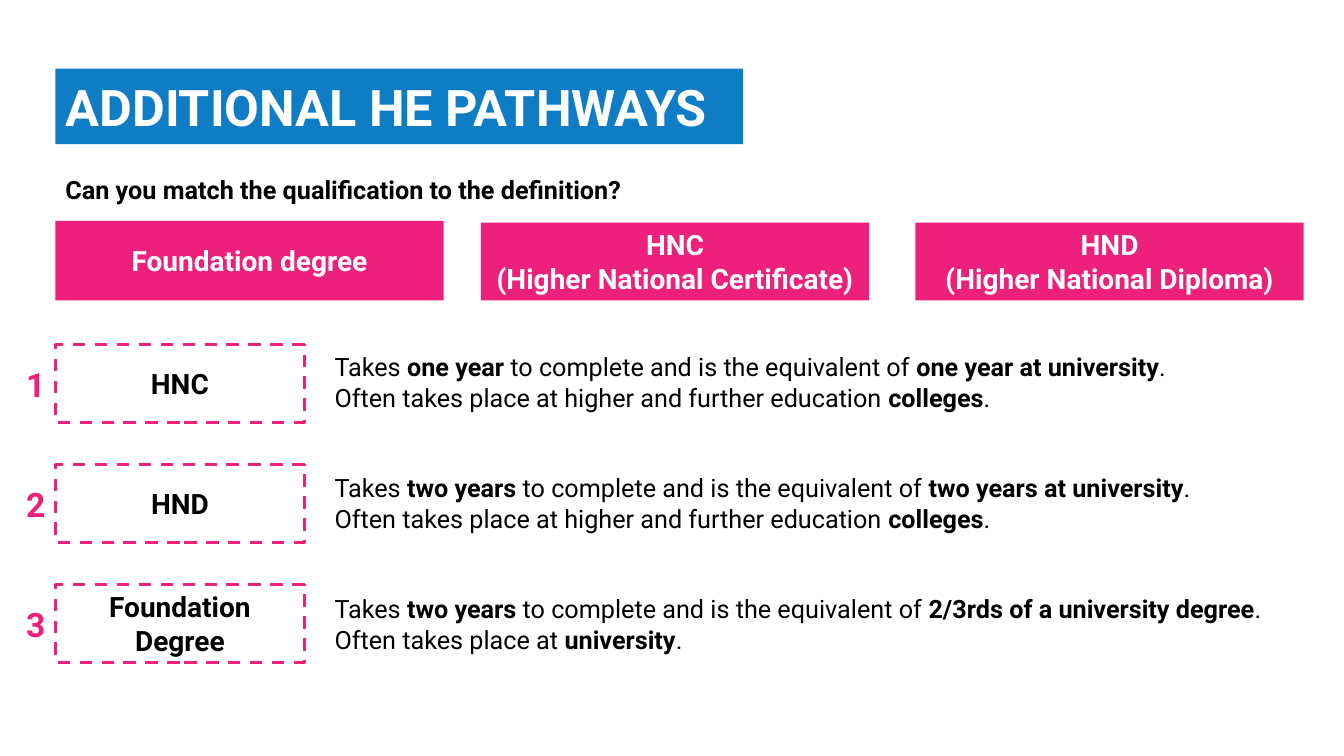
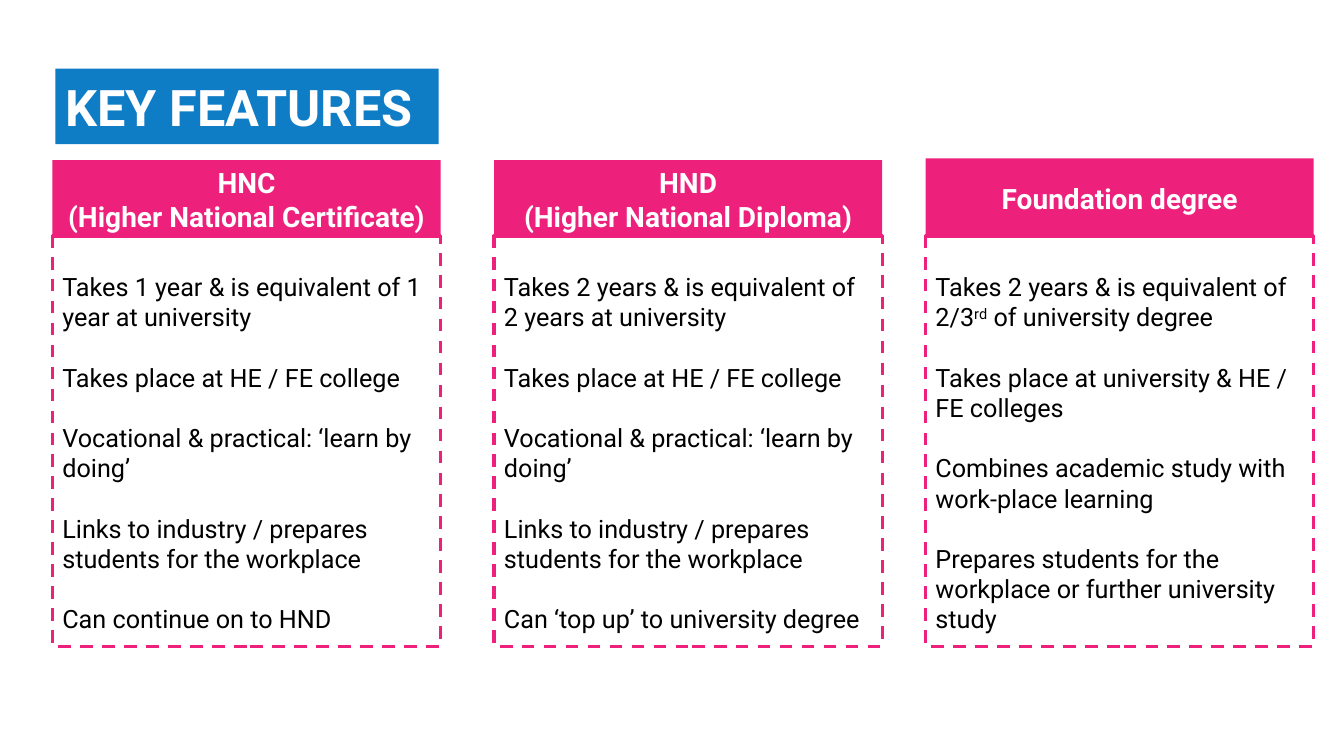
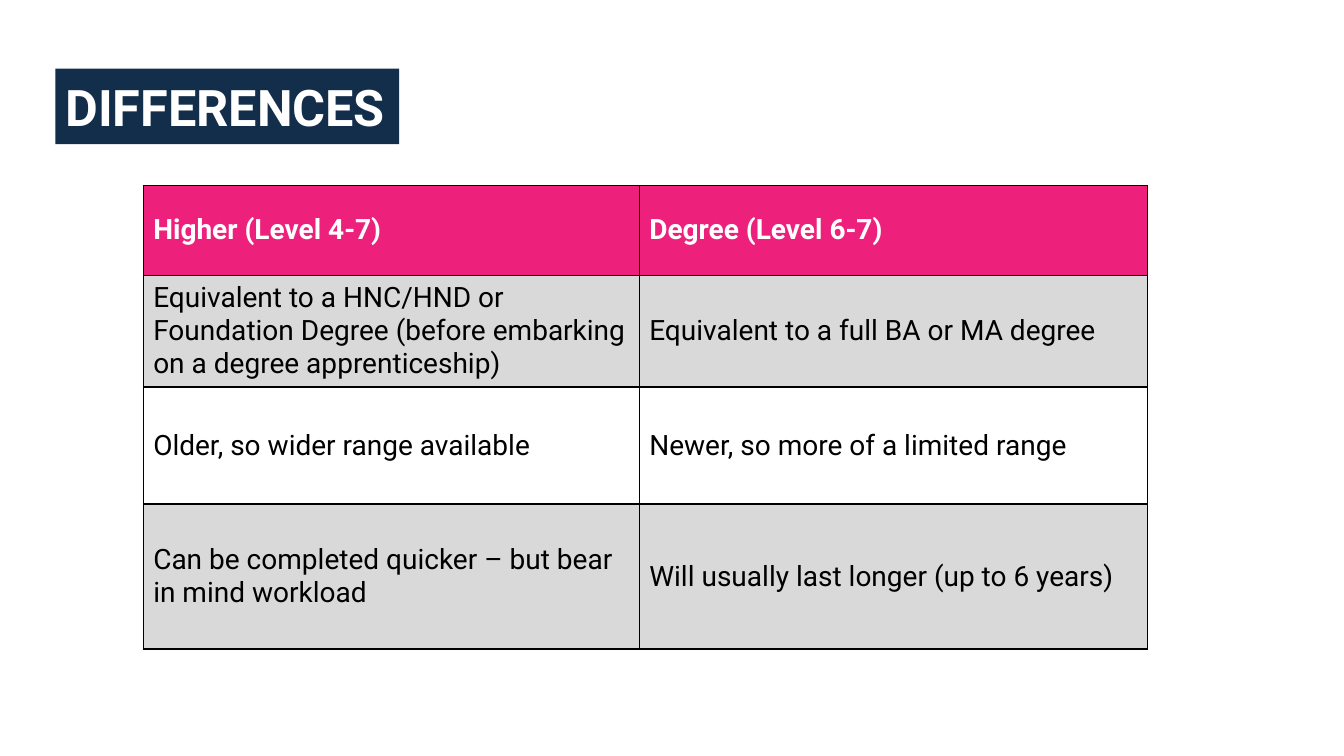
"""Builds three slides on higher education pathways."""
from lxml import etree
from pptx import Presentation
from pptx.dml.color import RGBColor
from pptx.enum.dml import MSO_LINE
from pptx.enum.shapes import MSO_SHAPE
from pptx.enum.text import MSO_ANCHOR, MSO_AUTO_SIZE, PP_ALIGN
from pptx.oxml.ns import qn
from pptx.util import Inches, Pt

RECTANGLE = MSO_SHAPE.RECTANGLE
DASH = MSO_LINE.DASH
TOP, MIDDLE = MSO_ANCHOR.TOP, MSO_ANCHOR.MIDDLE
LEFT, CENTER = PP_ALIGN.LEFT, PP_ALIGN.CENTER
NO_FIT = MSO_AUTO_SIZE.NONE
TITLE_ONLY = 5

COLORS = {
    "blue": "0F7CC6",
    "navy": "132E4B",
    "pink": "ED217C",
    "grey": "D9D9D9",
    "black": "000000",
    "white": "FFFFFF",
}
FONT = "Roboto"
MARGIN = 0.55
CARD_WIDTH = 3.85

FOUNDATION = "Foundation degree"
HNC = "HNC\n(Higher National Certificate)"
HND = "HND\n(Higher National Diploma)"


def color(name):
    return RGBColor.from_string(COLORS[name])


class Deck:
    """Holds the shared style and the current slide."""

    def __init__(self):
        self.presentation = Presentation()
        self.presentation.slide_width = Inches(13.33)
        self.presentation.slide_height = Inches(7.5)
        self.slide = None

    def add_slide(self, title, band_width, band="blue"):
        layout = self.presentation.slide_layouts[TITLE_ONLY]
        self.slide = self.presentation.slides.add_slide(layout)
        shape = self.slide.shapes.title
        shape.left, shape.top = Inches(MARGIN), Inches(0.68)
        shape.width, shape.height = Inches(band_width), Inches(0.75)
        shape.fill.solid()
        shape.fill.fore_color.rgb = color(band)
        self.fill_text(shape.text_frame, title, 36, "white", bold=True, anchor=MIDDLE)

    def fill_text(self, frame, text, size, ink="black", bold=False, align=LEFT,
                  anchor=TOP, gap=0):
        """Adds one paragraph a line; *stars* mark bold and ^carets^ superscript."""
        frame.word_wrap = True
        frame.auto_size = NO_FIT
        frame.vertical_anchor = anchor
        for index, line in enumerate(text.split("\n")):
            paragraph = frame.add_paragraph() if index else frame.paragraphs[0]
            paragraph.alignment = align
            paragraph.space_before = Pt(gap if index else 0)
            for star, part in enumerate(line.split("*")):
                for caret, piece in enumerate(part.split("^")):
                    if piece:
                        run = paragraph.add_run()
                        run.text = piece
                        self.style(run, size, ink, bold or star % 2 == 1)
                        if caret % 2:
                            run._r.get_or_add_rPr().set("baseline", "30000")

    def style(self, run, size, ink, bold):
        run.font.name = FONT
        run.font.size = Pt(size)
        run.font.bold = bold
        run.font.color.rgb = color(ink)

    def text(self, left, top, width, height, text, size, **options):
        box = self.slide.shapes.add_textbox(
            Inches(left), Inches(top), Inches(width), Inches(height))
        self.fill_text(box.text_frame, text, size, **options)

    def rectangle(self, left, top, width, height):
        shape = self.slide.shapes.add_shape(
            RECTANGLE, Inches(left), Inches(top), Inches(width), Inches(height))
        shape.shadow.inherit = False
        return shape

    def header(self, left, bottom, text):
        height = 0.77 if "\n" in text else 0.79
        shape = self.rectangle(left, bottom - height, CARD_WIDTH, height)
        shape.fill.solid()
        shape.fill.fore_color.rgb = color("pink")
        shape.line.fill.background()
        self.fill_text(shape.text_frame, text, 20, "white", bold=True,
                       align=CENTER, anchor=MIDDLE)

    def dashed_box(self, left, top, width, height):
        shape = self.rectangle(left, top, width, height)
        shape.fill.background()
        shape.line.color.rgb = color("pink")
        shape.line.width = Pt(2.25)
        shape.line.dash_style = DASH
        return shape

    def answer(self, left, top, text):
        shape = self.dashed_box(left, top, 2.47, 0.77)
        self.fill_text(shape.text_frame, text, 20, bold=True, align=CENTER, anchor=MIDDLE)

    def panel(self, left, top, text):
        shape = self.dashed_box(left, top, CARD_WIDTH, 4.07)
        shape.text_frame.margin_top = Inches(0.35)
        self.fill_text(shape.text_frame, text, 18, gap=21.6)

    def table(self, left, top, widths, heights, rows):
        table = self.slide.shapes.add_table(
            len(rows), len(widths), Inches(left), Inches(top),
            Inches(sum(widths)), Inches(sum(heights))).table
        table.horz_banding = False
        for column, width in zip(table.columns, widths):
            column.width = Inches(width)
        for index, (row, height, texts) in enumerate(zip(table.rows, heights, rows)):
            row.height = Inches(height)
            heading = index == 0
            fill = "pink" if heading else "grey" if index % 2 else "white"
            for cell, text in zip(row.cells, texts):
                self.border(cell)
                cell.fill.solid()
                cell.fill.fore_color.rgb = color(fill)
                self.fill_text(cell.text_frame, text, 20,
                               "white" if heading else "black", bold=heading)
                cell.vertical_anchor = MIDDLE

    def border(self, cell):
        properties = cell._tc.get_or_add_tcPr()
        for side in ("a:lnL", "a:lnR", "a:lnT", "a:lnB"):
            line = etree.SubElement(properties, qn(side), w=str(Pt(1)))
            fill = etree.SubElement(line, qn("a:solidFill"))
            etree.SubElement(fill, qn("a:srgbClr"), val=COLORS["black"])


def add_pathways(deck):
    deck.add_slide("ADDITIONAL HE PATHWAYS", 6.82)
    deck.text(MARGIN, 1.68, 11.98, 0.4,
              "Can you match the qualification to the definition?", 18, bold=True)
    for left, name in ((MARGIN, FOUNDATION), (4.77, HNC), (9.08, HND)):
        deck.header(left, 2.98, name)
    definitions = (
        ("HNC",
         "Takes *one year* to complete and is the equivalent of *one year at university*.\n"
         "Often takes place at higher and further education *colleges*."),
        ("HND",
         "Takes *two years* to complete and is the equivalent of *two years at university*.\n"
         "Often takes place at higher and further education *colleges*."),
        ("Foundation Degree",
         "Takes *two years* to complete and is the equivalent of "
         "*2/3rds of a university degree*.\n"
         "Often takes place at *university*."),
    )
    for index, (name, definition) in enumerate(definitions):
        top = 3.42 + 1.19 * index
        deck.text(0.16, top + 0.14, 0.39, 0.5, str(index + 1), 24, ink="pink", bold=True)
        deck.answer(MARGIN, top, name)
        deck.text(3.22, 3.44 + 1.2 * index, 9.93, 0.7, definition, 18)


def add_features(deck):
    deck.add_slide("KEY FEATURES", 3.8)
    shared = ("Takes place at HE / FE college\n"
              "Vocational & practical: ‘learn by doing’\n"
              "Links to industry / prepares students for the workplace\n")
    cards = (
        (0.52, HNC,
         "Takes 1 year & is equivalent of 1 year at university\n"
         + shared + "Can continue on to HND"),
        (4.9, HND,
         "Takes 2 years & is equivalent of 2 years at university\n"
         + shared + "Can ‘top up’ to university degree"),
        (9.18, FOUNDATION,
         "Takes 2 years & is equivalent of 2/3^rd^ of university degree\n"
         "Takes place at university & HE / FE colleges\n"
         "Combines academic study with work-place learning\n"
         "Prepares students for the workplace or further university study"),
    )
    for left, name, features in cards:
        deck.panel(left, 2.34, features)
        deck.header(left, 2.36, name)


def add_differences(deck):
    deck.add_slide("DIFFERENCES", 3.41, "navy")
    deck.table(1.42, 1.84, (4.92, 5.04), (0.89, 1.11, 1.16, 1.44), (
        ("Higher (Level 4-7)", "Degree (Level 6-7)"),
        ("Equivalent to a HNC/HND or Foundation Degree "
         "(before embarking on a degree apprenticeship)",
         "Equivalent to a full BA or MA degree"),
        ("Older, so wider range available", "Newer, so more of a limited range"),
        ("Can be completed quicker – but bear in mind workload",
         "Will usually last longer (up to 6 years)"),
    ))


def main():
    deck = Deck()
    add_pathways(deck)
    add_features(deck)
    add_differences(deck)
    deck.presentation.save("out.pptx")


if __name__ == "__main__":
    main()
